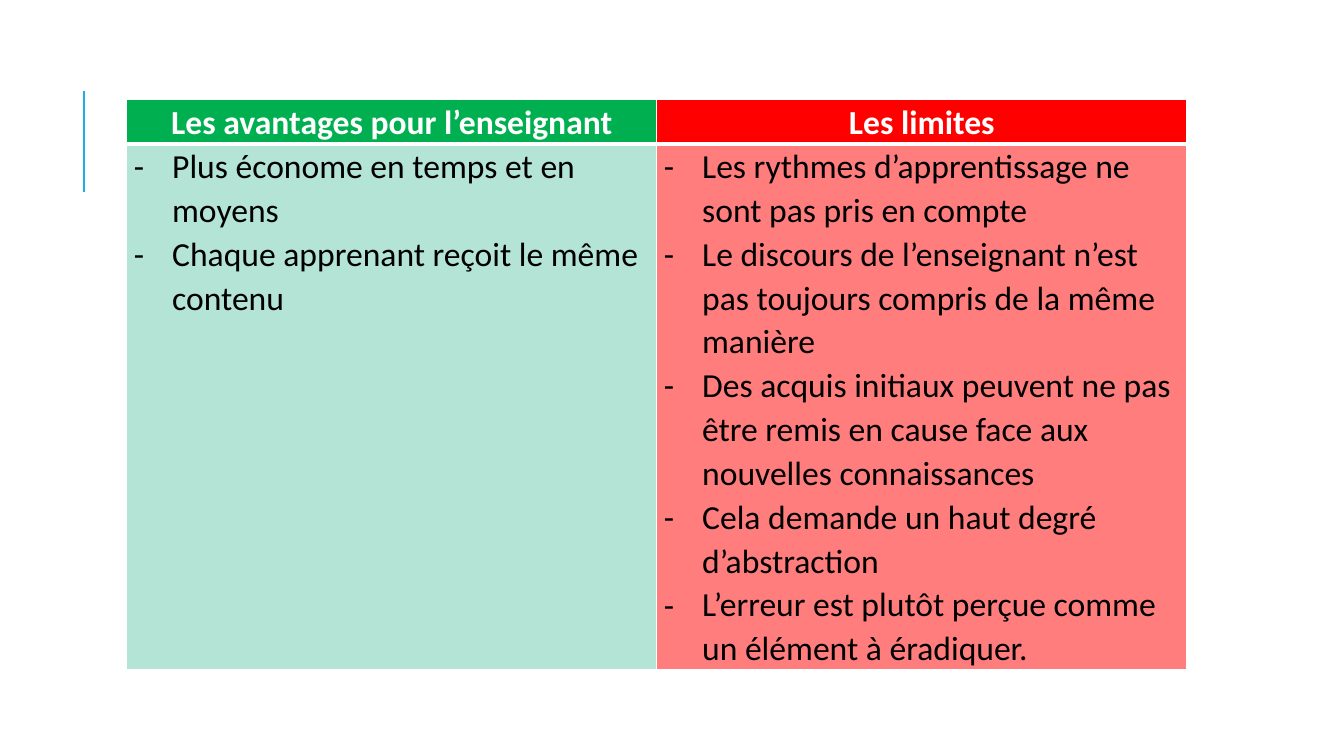
from dataclasses import dataclass

from pptx import Presentation
from pptx.dml.color import RGBColor
from pptx.enum.shapes import MSO_CONNECTOR
from pptx.enum.text import PP_ALIGN
from pptx.oxml.ns import qn
from pptx.slide import Slide
from pptx.table import _Cell
from pptx.text.text import _Paragraph
from pptx.util import Inches, Pt
from lxml import etree

STRAIGHT = MSO_CONNECTOR.STRAIGHT
CENTER = PP_ALIGN.CENTER
LEFT = PP_ALIGN.LEFT

WIDTH, HEIGHT = Inches(13.33), Inches(7.5)
COLUMN, ROW = WIDTH / 160, HEIGHT / 75

COLORS = {
    "accent": "1CADE4",
    "white": "FFFFFF",
    "black": "000000",
    "green": "00B050",
    "mint": "B3E4D6",
    "red": "FF0000",
    "salmon": "FF7D7D",
}

INSETS = {
    "margin_left": Inches(0.07),
    "margin_right": Inches(0.07),
    "margin_top": 0,
    "margin_bottom": 0,
}
FONT = {"name": "Calibri", "size": Pt(24)}
HEADER_BORDERS = {"lnL": 1, "lnR": 1, "lnT": 1, "lnB": 3}
BODY_BORDERS = {"lnL": 1, "lnR": 1, "lnT": 3, "lnB": 1}
HANGING = Inches(0.38)


@dataclass(frozen=True)
class Topic:
    title: str
    title_fill: str
    points: tuple[str, ...]
    points_fill: str


TOPICS = (
    Topic(
        "Les avantages pour l’enseignant",
        "green",
        (
            "Plus économe en temps et en moyens",
            "Chaque apprenant reçoit le même contenu",
        ),
        "mint",
    ),
    Topic(
        "Les limites",
        "red",
        (
            "Les rythmes d’apprentissage ne sont pas pris en compte",
            "Le discours de l’enseignant n’est pas toujours compris de la même manière",
            "Des acquis initiaux peuvent ne pas être remis en cause face aux nouvelles connaissances",
            "Cela demande un haut degré d’abstraction",
            "L’erreur est plutôt perçue comme un élément à éradiquer.",
        ),
        "salmon",
    ),
)


def color(name: str) -> RGBColor:
    return RGBColor.from_string(COLORS[name])


def apply(target: object, values: dict) -> None:
    for name, value in values.items():
        setattr(target, name, value)


def style_cell(cell: _Cell, fill: str, borders: dict[str, int]) -> None:
    apply(cell, INSETS)
    cell.fill.solid()
    cell.fill.fore_color.rgb = color(fill)
    properties = cell._tc.get_or_add_tcPr()
    for index, (side, points) in enumerate(borders.items()):
        border = etree.Element(qn(f"a:{side}"), w=str(Pt(points)))
        solid = etree.SubElement(border, qn("a:solidFill"))
        etree.SubElement(solid, qn("a:srgbClr"), val=COLORS["white"])
        properties.insert(index, border)


def add_dash(para: _Paragraph) -> None:
    properties = para._p.get_or_add_pPr()
    properties.set("marL", str(HANGING))
    properties.set("indent", str(-HANGING))
    etree.SubElement(properties, qn("a:buFont"), typeface=FONT["name"])
    etree.SubElement(properties, qn("a:buChar"), char="-")


def write_cell(cell: _Cell, lines: tuple[str, ...], ink: str, heading: bool) -> None:
    frame = cell.text_frame
    for index, line in enumerate(lines):
        para = frame.add_paragraph() if index else frame.paragraphs[0]
        if not heading:
            add_dash(para)
        apply(para, {"line_spacing": 1.07, "alignment": CENTER if heading else LEFT})
        span = para.add_run()
        span.text = line
        apply(span.font, FONT | {"bold": heading})
        span.font.color.rgb = color(ink)
    para.space_after = Pt(8)


def add_side_rule(page: Slide) -> None:
    x = round(10 * COLUMN)
    rule = page.shapes.add_connector(STRAIGHT, x, round(19 * ROW), x, round(9 * ROW))
    rule.line.color.rgb = color("accent")
    rule.line.width = Pt(1.5)
    etree.SubElement(rule._element.spPr, qn("a:effectLst"))


def add_comparison(page: Slide) -> None:
    column_width = round(63.1 * COLUMN)
    row_heights = [round(share * ROW) for share in (4.3, 50.9)]
    table = page.shapes.add_table(
        len(row_heights),
        len(TOPICS),
        round(15.1 * COLUMN),
        round(9.9 * ROW),
        column_width * len(TOPICS),
        sum(row_heights),
    ).table
    table.horz_banding = False
    for row, height in zip(table.rows, row_heights):
        row.height = height
    for index, topic in enumerate(TOPICS):
        table.columns[index].width = column_width
        header, body = table.cell(0, index), table.cell(1, index)
        style_cell(header, topic.title_fill, HEADER_BORDERS)
        write_cell(header, (topic.title,), "white", True)
        style_cell(body, topic.points_fill, BODY_BORDERS)
        write_cell(body, topic.points, "black", False)


def main() -> None:
    deck = Presentation()
    apply(deck, {"slide_width": WIDTH, "slide_height": HEIGHT})
    page = deck.slides.add_slide(deck.slide_layouts[6])
    add_side_rule(page)
    add_comparison(page)
    deck.save("out.pptx")


if __name__ == "__main__":
    main()
